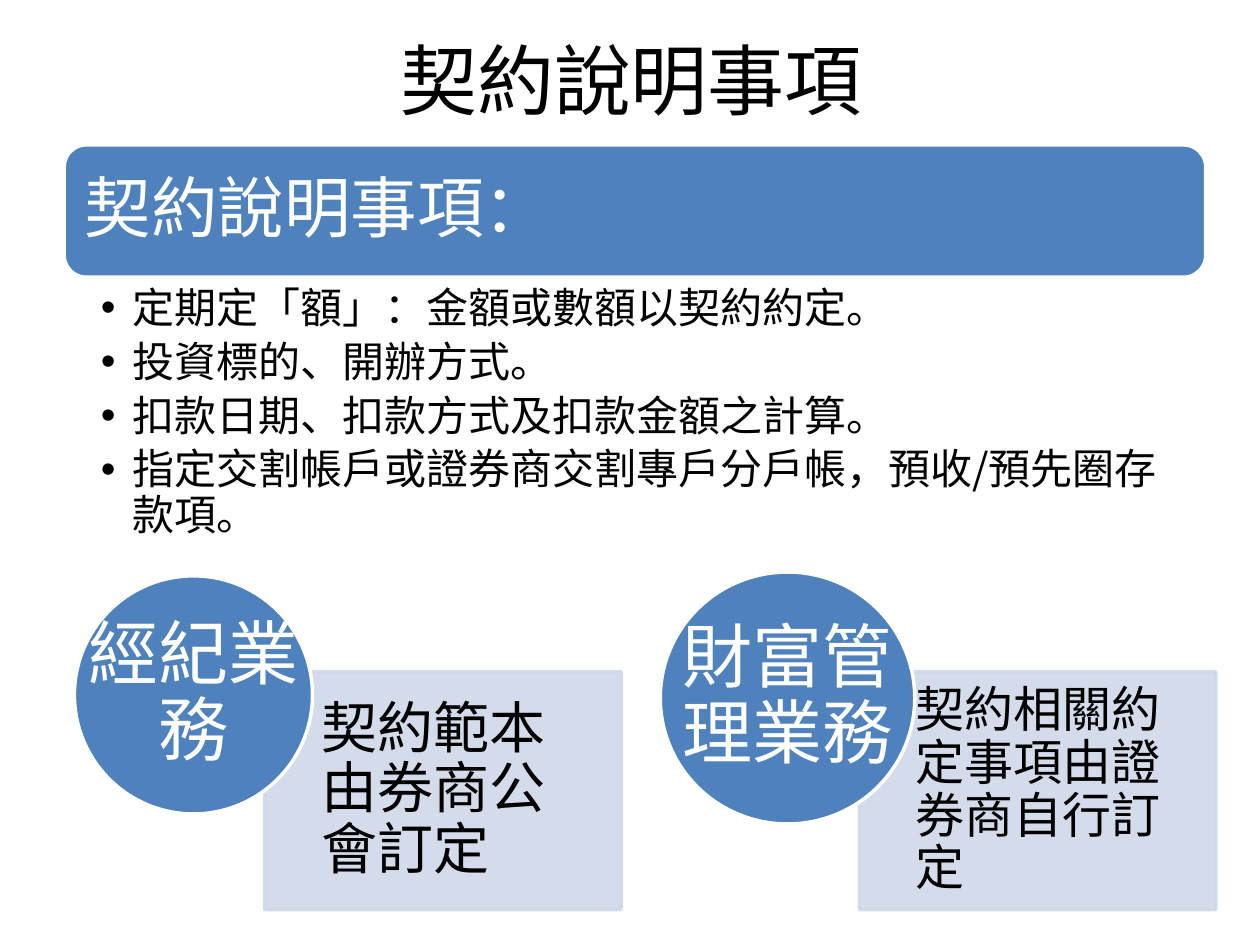
from dataclasses import dataclass

from lxml import etree
from pptx import Presentation
from pptx.dml.color import RGBColor
from pptx.enum import shapes, text
from pptx.oxml import ns
from pptx.util import Inches, Pt

FONT = "Noto Sans CJK SC"
COLORS = {"blue": "4F81BD", "pale": "D0D8E8", "white": "FFFFFF", "black": "000000"}
CENTER = text.PP_ALIGN.CENTER
LEFT = text.PP_ALIGN.LEFT


@dataclass
class Area:
    left: float
    top: float
    width: float
    height: float

    def lengths(self) -> list:
        return [Inches(v) for v in (self.left, self.top, self.width, self.height)]


@dataclass
class Business:
    name: str
    circle: Area
    note: str
    note_left: float
    note_size: int
    note_inset: float


BULLETS = [
    "定期定「額」：金額或數額以契約約定。",
    "投資標的、開辦方式。",
    "扣款日期、扣款方式及扣款金額之計算。",
    "指定交割帳戶或證券商交割專戶分戶帳，預收/預先圈存款項。",
]
BUSINESSES = [
    Business("經紀業務", Area(0.59, 4.57, 1.89, 1.89),
             "契約範本由券商公會訂定", 2.1, 32, 0.25),
    Business("財富管理業務", Area(5.24, 4.54, 2.02, 2),
             "契約相關約定事項由證券商自行訂定", 6.82, 28, 0.22),
]


def rgb(name: str) -> RGBColor:
    return RGBColor.from_string(COLORS[name])


def style(para, size: int, color: str, align=LEFT, spacing=0.9, after=0.35) -> None:
    """Format a paragraph and its runs; after is a share of the text size."""
    para.alignment = align
    para.line_spacing = spacing
    para.space_before = Pt(0)
    para.space_after = Pt(size * after)
    for span in para.runs:
        span.font.size = Pt(size)
        span.font.name = FONT
        span.font.color.rgb = rgb(color)
        etree.SubElement(span.font._element, ns.qn("a:ea"), typeface=FONT)


def set_frame(box, insets: tuple, anchor=text.MSO_ANCHOR.MIDDLE):
    """Set wrapping, anchor and insets (left, top, right, bottom)."""
    frame = box.text_frame
    frame.word_wrap = True
    frame.auto_size = text.MSO_AUTO_SIZE.NONE
    frame.vertical_anchor = anchor
    (frame.margin_left, frame.margin_top,
     frame.margin_right, frame.margin_bottom) = map(Inches, insets)
    return frame


def write(box, words: str, size: int, color: str, insets: tuple, align=LEFT) -> None:
    frame = set_frame(box, insets)
    frame.text = words
    style(frame.paragraphs[0], size, color, align)


def add_panel(page, kind, area: Area, fill: str, line: str):
    panel = page.shapes.add_shape(kind, *area.lengths())
    panel.shadow.inherit = False
    panel.fill.solid()
    panel.fill.fore_color.rgb = rgb(fill)
    panel.line.color.rgb = rgb(line)
    panel.line.width = Pt(2)
    return panel


def add_business(page, item: Business) -> None:
    note = add_panel(page, shapes.MSO_SHAPE.RECTANGLE,
                     Area(item.note_left, 5.33, 2.83, 1.89), "pale", "pale")
    for color in note._element.spPr.iter(ns.qn("a:srgbClr")):
        etree.SubElement(color, ns.qn("a:alpha"), val="90000")
    inset = item.note_inset
    write(note, item.note, item.note_size, "black", (0.45, inset, inset, inset))

    add_panel(page, shapes.MSO_SHAPE.OVAL, item.circle, "blue", "white")
    # The name needs the circle's full width, more than its inner text area.
    label = page.shapes.add_textbox(*item.circle.lengths())
    write(label, item.name, 40, "white", (0, 0, 0, 0), CENTER)


def place(box, area: Area) -> None:
    box.left, box.top, box.width, box.height = area.lengths()


def fill_title(title) -> None:
    place(title, Area(0.51, 0, 9, 1.25))
    frame = set_frame(title, (0.1, 0.05, 0.1, 0.05))
    frame.text = "契約說明事項"
    style(frame.paragraphs[0], 44, "black", CENTER, 1.0, 0)


def fill_bullets(body) -> None:
    place(body, Area(0.51, 2.25, 9.06, 2.55))
    frame = set_frame(body, (0.29, 0.03, 0.19, 0.03), text.MSO_ANCHOR.TOP)
    frame.text = "\n".join(BULLETS)
    for para in frame.paragraphs:
        props = para._p.get_or_add_pPr()
        props.set("marL", str(Inches(0.25)))
        props.set("indent", str(-Inches(0.25)))
        etree.SubElement(props, ns.qn("a:buChar"), char="•")
        style(para, 24, "black", after=0.2)


def main() -> None:
    deck = Presentation()
    deck.slide_width, deck.slide_height = Inches(10), Inches(7.5)
    page = deck.slides.add_slide(deck.slide_layouts[1])
    fill_title(page.shapes.title)
    banner = add_panel(page, shapes.MSO_SHAPE.ROUNDED_RECTANGLE,
                       Area(0.51, 1.15, 9.06, 1.05), "blue", "white")
    write(banner, "契約說明事項：", 38, "white", (0.11, 0.11, 0.11, 0.11))
    fill_bullets(page.placeholders[1])
    for item in BUSINESSES:
        add_business(page, item)
    deck.save("out.pptx")


if __name__ == "__main__":
    main()
